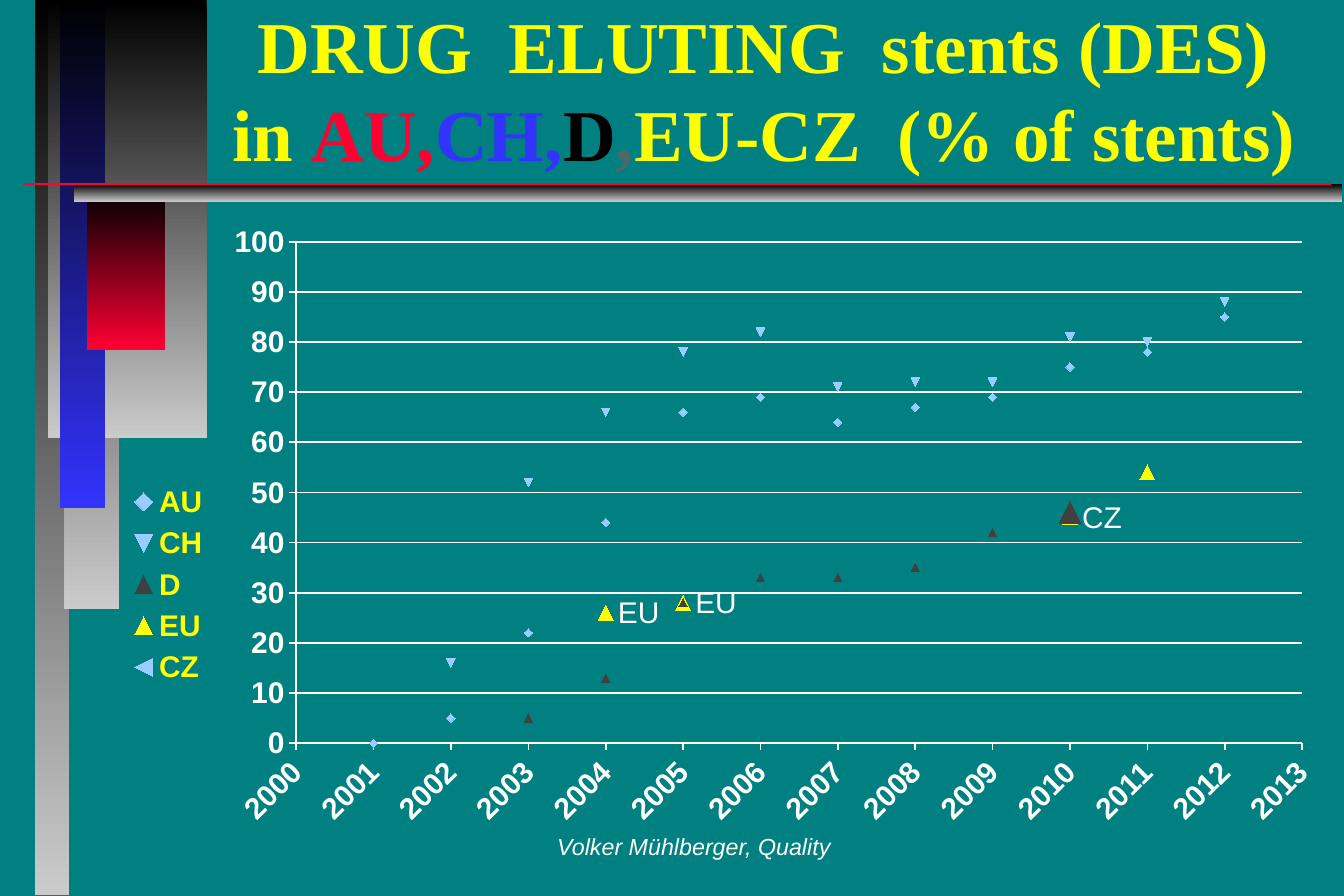
from lxml import etree
from pptx import Presentation
from pptx.chart.data import XyChartData
from pptx.dml.color import RGBColor
from pptx.enum.chart import (XL_CHART_TYPE, XL_LABEL_POSITION, XL_LEGEND_POSITION,
                             XL_MARKER_STYLE, XL_TICK_MARK)
from pptx.enum.shapes import MSO_CONNECTOR, MSO_SHAPE
from pptx.enum.text import MSO_ANCHOR, PP_ALIGN
from pptx.oxml import parse_xml
from pptx.oxml.ns import nsdecls, qn
from pptx.util import Inches, Pt

RECT = MSO_SHAPE.RECTANGLE
AUTO = XL_MARKER_STYLE.AUTOMATIC
TRIANGLE = XL_MARKER_STYLE.TRIANGLE
OUTSIDE = XL_TICK_MARK.OUTSIDE
COLORS = {
    "teal": "008080", "black": "000000", "silver": "CBCBCB", "blue": "3333FF",
    "red": "FF0033", "yellow": "FFFF00", "white": "FFFFFF", "grey": "4D6868",
    "dark": "404040", "sky": "99CCFF",
}


def rgb(name):
    return RGBColor.from_string(COLORS[name])


def add_text(paragraph, text, size=18, font="Arial", color="white", bold=False, italic=False):
    run = paragraph.add_run()
    run.text = text
    run.font.size = Pt(size)
    run.font.name = font
    run.font.bold = bold
    run.font.italic = italic
    run.font.color.rgb = rgb(color)


prs = Presentation()
prs.slide_width = Inches(11.25)
prs.slide_height = Inches(7.5)
slide = prs.slides.add_slide(prs.slide_layouts[6])
slide.background.fill.solid()
slide.background.fill.fore_color.rgb = rgb("teal")

bars = [
    (0.29, 0, 0.29, 7.49, "silver"),
    (0.54, 0, 0.46, 5.1, "silver"),
    (0.4, 0, 1.33, 3.67, "silver"),
    (0.5, 0, 0.38, 4.25, "blue"),
    (0.73, 1.6, 0.65, 1.33, "red"),
    (0.62, 1.54, 10.61, 0.15, "silver"),
]
for left, top, width, height, end_color in bars:
    bar = slide.shapes.add_shape(RECT, Inches(left), Inches(top), Inches(width), Inches(height))
    bar.shadow.inherit = False
    bar.line.fill.background()
    bar.fill.gradient()
    bar.fill.gradient_angle = 270
    for stop, color, position in zip(bar.fill.gradient_stops, ("black", end_color), (0, 1)):
        stop.color.rgb = rgb(color)
        stop.position = position

title_rule = slide.shapes.add_connector(
    MSO_CONNECTOR.STRAIGHT, Inches(0.2), Inches(1.54), Inches(11.14), Inches(1.54))
title_rule.line.color.rgb = rgb("red")
title_rule.line.width = Pt(1)
etree.SubElement(title_rule._element.spPr, qn("a:effectLst"))

footer = slide.shapes.add_textbox(Inches(4.03), Inches(6.83), Inches(3.56), Inches(0.5)).text_frame
footer.word_wrap = False
footer.vertical_anchor = MSO_ANCHOR.MIDDLE
footer.paragraphs[0].alignment = PP_ALIGN.CENTER
add_text(footer.paragraphs[0], "Volker Mühlberger, Quality", size=14, italic=True)

title = slide.shapes.add_textbox(Inches(0.59), Inches(0.25), Inches(10.66), Inches(1.27)).text_frame
title.word_wrap = True
title.vertical_anchor = MSO_ANCHOR.BOTTOM
title.margin_left = Inches(1.05)
heading = title.paragraphs[0]
heading.alignment = PP_ALIGN.CENTER
for text, color in [
    ("DRUG  ELUTING  stents (DES)\vin ", "yellow"), ("AU,", "red"), ("CH,", "blue"),
    ("D", "black"), (",", "grey"), ("EU-CZ  (% of stents)", "yellow"),
]:
    first, *rest = text.split("\v")
    add_text(heading, first, size=44, font="Times New Roman", color=color, bold=True)
    for line in rest:
        heading.add_line_break()
        add_text(heading, line, size=44, font="Times New Roman", color=color, bold=True)

years = range(2001, 2013)
des_share = {
    "AU": [0, 5, 22, 44, 66, 69, 64, 67, 69, 75, 78, 85],
    "CH": [None, 16, 52, 66, 78, 82, 71, 72, 72, 81, 80, 88],
    "D": [None, None, 5, 13, 28, 33, 33, 35, 42, 46, None, None],
    "EU": [None, None, None, 26, 28, None, None, None, None, 45, 54, None],
    "CZ": [None] * 9 + [45, None, None],
}
chart_data = XyChartData()
for country, shares in des_share.items():
    country_data = chart_data.add_series(country)
    for year, share in zip(years, shares):
        country_data.add_data_point(year, share)

chart = slide.shapes.add_chart(
    XL_CHART_TYPE.XY_SCATTER, Inches(0.98), Inches(1.55), Inches(10.27), Inches(5.51),
    chart_data).chart
chart.has_title = False
chart.font.size = Pt(18)
chart.font.name = "Arial"
chart.font.color.rgb = rgb("white")
plot = chart.plots[0]
plot.vary_by_categories = False
for value in list(chart._chartSpace.iter(qn("c:v"))):
    if value.text in (None, "", "None"):
        missing = value.getparent()
        missing.getparent().remove(missing)

markers = {
    "AU": (AUTO, 5, "sky"), "CH": (AUTO, 5, "sky"), "D": (AUTO, 5, "dark"),
    "EU": (TRIANGLE, 9, "yellow"), "CZ": (AUTO, 5, "sky"),
}
series = {s.name: s for s in plot.series}
latest_germany = series["D"].points[years.index(2010)].marker
marker_formats = [(series[name].marker, *look) for name, look in markers.items()]
for marker, style, size, color in marker_formats + [(latest_germany, TRIANGLE, 13, "dark")]:
    marker.style = style
    marker.size = size
    marker.format.fill.solid()
    marker.format.fill.fore_color.rgb = rgb(color)
    marker.format.line.fill.background()
for number, country in enumerate(series.values(), 1):
    country.smooth = False
    country.format.line.fill.background()
    country._element.find(qn("c:idx")).set("val", str(number))

for year, text in [(2004, "EU"), (2005, "EU"), (2010, "CZ")]:
    label = series["EU"].points[years.index(year)].data_label
    add_text(label.text_frame.paragraphs[0], text)
    label.position = XL_LABEL_POSITION.RIGHT

year_axis, share_axis = chart.category_axis, chart.value_axis
for axis, low, high, step in [(year_axis, 2000, 2013, 1), (share_axis, 0, 100, 10)]:
    axis.minimum_scale = low
    axis.maximum_scale = high
    axis.major_unit = step
    axis.has_title = False
    axis.has_major_gridlines = axis is share_axis
    axis.major_tick_mark = OUTSIDE
    axis.minor_tick_mark = XL_TICK_MARK.NONE
    axis.format.line.color.rgb = rgb("white")
    axis.format.line.width = Pt(1)
    axis.tick_labels.number_format = "General"
    axis.tick_labels.number_format_is_linked = False
    axis.tick_labels.font.size = Pt(18)
    axis.tick_labels.font.name = "Arial"
    axis.tick_labels.font.bold = True
    axis.tick_labels.font.color.rgb = rgb("white")
share_axis.major_gridlines.format.line.color.rgb = rgb("white")
share_axis.major_gridlines.format.line.width = Pt(1)
year_axis._element.find(qn("c:txPr")).find(qn("a:bodyPr")).set("rot", "-2700000")

chart.has_legend = True
legend = chart.legend
legend.position = XL_LEGEND_POSITION.LEFT
legend.include_in_layout = False
legend.font.size = Pt(18)
legend.font.name = "Arial"
legend.font.bold = True
legend.font.color.rgb = rgb("yellow")

plot_area = chart._chartSpace.chart.plotArea
for owner, target, box in [
    (plot_area, '<c:layoutTarget val="inner"/>', (0.146, 0.086, 0.82, 0.762)),
    (legend._element, "", (0.007, 0.444, 0.07, 0.326)),
]:
    for old_layout in owner.findall(qn("c:layout")):
        owner.remove(old_layout)
    modes = "".join(f'<c:{side}Mode val="edge"/>' for side in "xy")
    sizes = "".join(f'<c:{side} val="{value}"/>' for side, value in zip("xywh", box))
    layout = parse_xml(f'<c:layout {nsdecls("c")}><c:manualLayout>{target}{modes}{sizes}'
                       '</c:manualLayout></c:layout>')
    owner.insert(0 if owner is plot_area else 1, layout)

prs.save("out.pptx")
